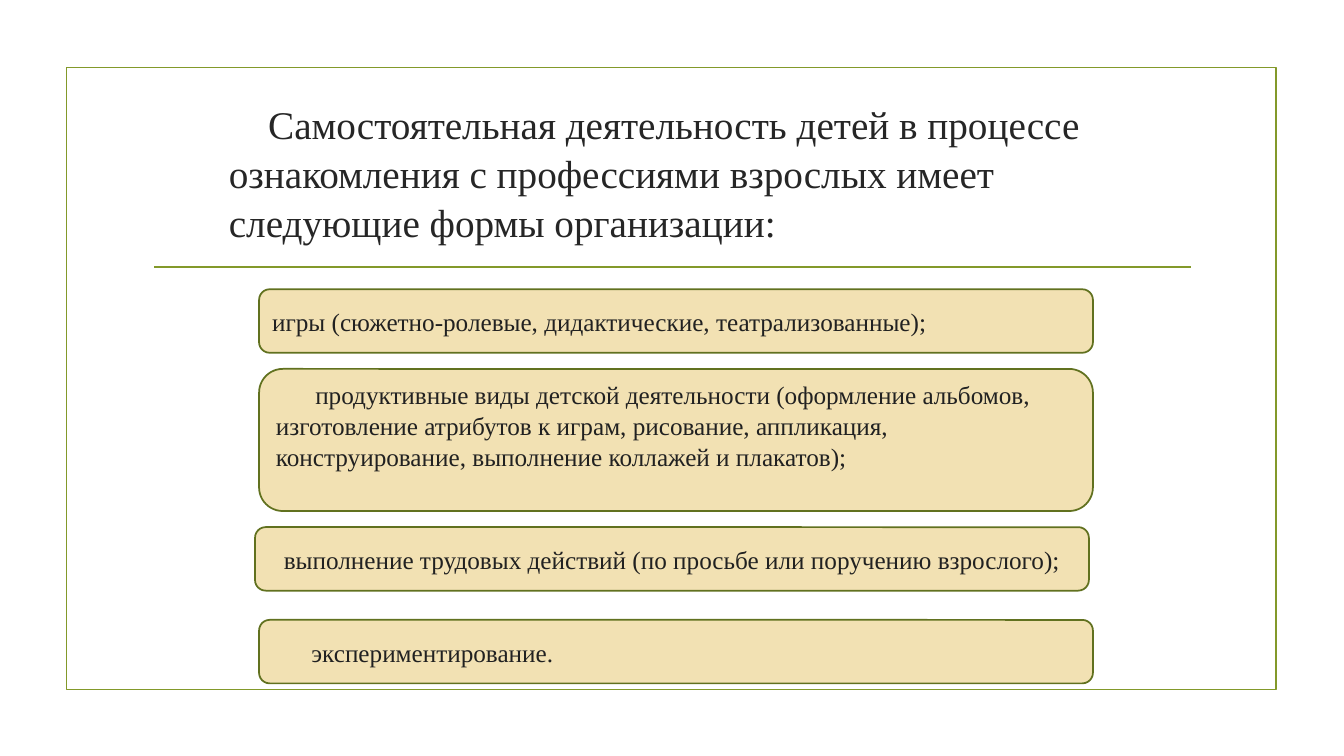
import pptx
import pptx.util
import pptx.dml.color
import pptx.enum.shapes
import pptx.enum.text
from lxml import etree
from pptx.util import Inches

RGBColor = pptx.dml.color.RGBColor
PP_ALIGN = pptx.enum.text.PP_ALIGN
MSO_ANCHOR = pptx.enum.text.MSO_ANCHOR
MSO_SHAPE = pptx.enum.shapes.MSO_SHAPE

GREEN = RGBColor(0x83, 0x99, 0x2A)
DARK_GREEN = RGBColor(0x61, 0x71, 0x1F)
SAND = RGBColor(0xF2, 0xE1, 0xB3)
TITLE_INK = RGBColor(0x26, 0x26, 0x26)
CARD_INK = RGBColor(0x21, 0x21, 0x21)

FONT = "Times New Roman"
LINE_WIDTH = pptx.util.Pt(1.25)
FIRST_LINE = Inches(0.39)
CARD_WIDTH = 8.27

INTRO = ("Самостоятельная деятельность детей в процессе ознакомления "
         "с профессиями взрослых имеет следующие формы организации:")

# text, left, top, height, first-line indent, alignment, bottom inset
FORMS = [
    ("игры (сюжетно-ролевые, дидактические, театрализованные);",
     2.57, 2.87, 0.63, 0, PP_ALIGN.LEFT, 0.05),
    ("продуктивные виды детской деятельности (оформление альбомов, "
     "изготовление атрибутов к играм, рисование, аппликация, "
     "конструирование, выполнение коллажей и плакатов);",
     2.57, 3.66, 1.41, FIRST_LINE, PP_ALIGN.LEFT, 0.35),
    ("выполнение трудовых действий (по просьбе или поручению взрослого);",
     2.53, 5.23, 0.63, 0, PP_ALIGN.CENTER, 0.05),
    ("экспериментирование.",
     2.57, 6.15, 0.63, FIRST_LINE, PP_ALIGN.LEFT, 0.05),
]


def write(frame, text, size, color, indent, align):
    frame.word_wrap = True
    paragraph = frame.paragraphs[0]
    paragraph.text = text
    paragraph.alignment = align
    paragraph.line_spacing = 1.04
    paragraph.space_before = pptx.util.Pt(0)
    properties = paragraph._p.get_or_add_pPr()
    properties.set("marL", "0")
    properties.set("indent", str(int(indent)))
    paragraph.font.name = FONT
    paragraph.font.size = pptx.util.Pt(size)
    paragraph.font.color.rgb = color


def add_frame(slide):
    border = slide.shapes.add_shape(
        MSO_SHAPE.RECTANGLE, Inches(0.66), Inches(0.67), Inches(12), Inches(6.17))
    border.shadow.inherit = False
    border.fill.background()
    border.line.color.rgb = GREEN
    border.line.width = LINE_WIDTH


def add_divider(slide):
    divider = slide.shapes.add_connector(
        pptx.enum.shapes.MSO_CONNECTOR.STRAIGHT,
        Inches(1.53), Inches(2.65), Inches(11.81), Inches(2.65))
    divider.line.color.rgb = GREEN
    divider.line.width = LINE_WIDTH
    etree.SubElement(divider._element.spPr, pptx.oxml.ns.qn("a:effectLst"))


def fill_title(slide):
    title = slide.shapes.title
    title.left, title.top = Inches(2.17), Inches(0.93)
    title.width, title.height = Inches(9), Inches(1.55)
    title.text_frame.auto_size = pptx.enum.text.MSO_AUTO_SIZE.NONE
    title.text_frame.vertical_anchor = MSO_ANCHOR.TOP
    write(title.text_frame, INTRO, 28, TITLE_INK, FIRST_LINE, PP_ALIGN.LEFT)


def add_card(slide, text, left, top, height, indent, align, bottom_inset):
    card = slide.shapes.add_shape(
        MSO_SHAPE.ROUNDED_RECTANGLE,
        Inches(left), Inches(top), Inches(CARD_WIDTH), Inches(height))
    card.shadow.inherit = False
    card.fill.solid()
    card.fill.fore_color.rgb = SAND
    card.line.color.rgb = DARK_GREEN
    card.line.width = LINE_WIDTH
    card.text_frame.vertical_anchor = MSO_ANCHOR.MIDDLE
    card.text_frame.margin_bottom = Inches(bottom_inset)
    write(card.text_frame, text, 18, CARD_INK, indent, align)


def main():
    presentation = pptx.Presentation()
    presentation.slide_width = Inches(13.33)
    presentation.slide_height = Inches(7.5)
    slide = presentation.slides.add_slide(presentation.slide_layouts[5])

    # Frame and heading
    add_frame(slide)
    add_divider(slide)
    fill_title(slide)

    # Forms of organisation
    for form in FORMS:
        add_card(slide, *form)

    presentation.save("out.pptx")


if __name__ == "__main__":
    main()
